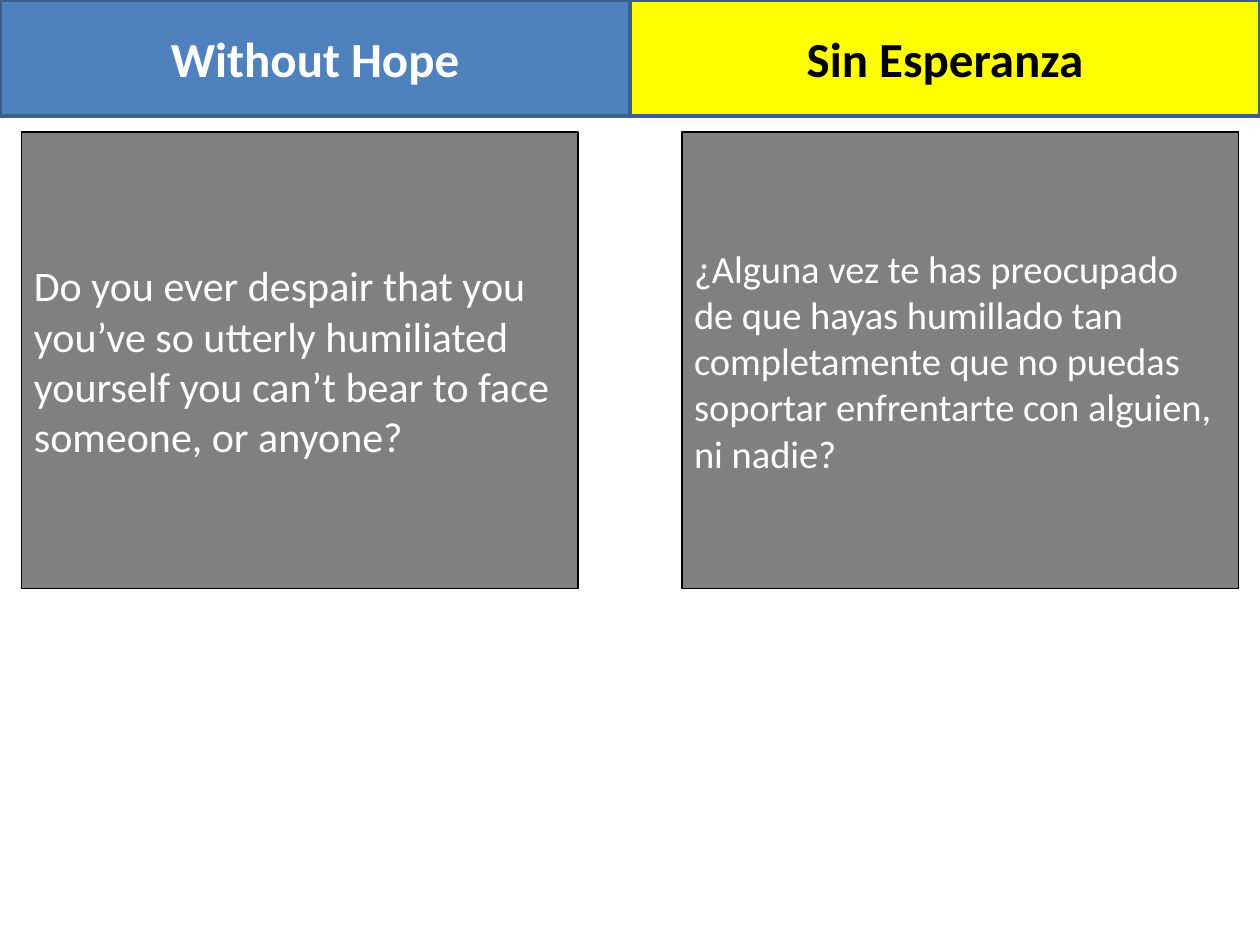
"""Build a bilingual slide with two headings above two text panels."""
from pptx import Presentation
from pptx.dml.color import RGBColor as RGB
from pptx.enum.shapes import MSO_SHAPE as Shape
from pptx.enum.text import MSO_ANCHOR as Anchor, MSO_AUTO_SIZE as Fit, PP_ALIGN as Align
from pptx.util import Inches, Pt

COLORS = {
    "blue": "4F81BD", "yellow": "FFFF00", "gray": "808080",
    "edge": "3A5F8C", "black": "000000", "white": "FFFFFF",
}


def color(name):
    return RGB.from_string(COLORS[name])


def style(box, place, fill, line, text, align, font):
    box.left, box.top, box.width, box.height = map(Inches, place)
    box.fill.solid()
    box.fill.fore_color.rgb = color(fill)
    box.line.color.rgb = color(line[0])
    box.line.width = Pt(line[1])
    frame = box.text_frame
    frame.text = text
    frame.word_wrap = True
    frame.auto_size = Fit.NONE
    frame.vertical_anchor = Anchor.MIDDLE
    par = frame.paragraphs[0]
    par.alignment = align
    run = par.runs[0]
    run.font.color.rgb = color(font["color"])
    for key in ("name", "size", "bold"):
        setattr(run.font, key, font[key])


deck = Presentation()
deck.slide_width, deck.slide_height = Inches(10), Inches(7.5)
slide = deck.slides.add_slide(deck.slide_layouts[5])

half, margin = 5, 0.17
wide = 4.42
panels = [
    (margin, 24, "Do you ever despair that you you’ve so utterly humiliated "
     "yourself you can’t bear to face someone, or anyone?"),
    (2 * half - margin - wide, 22, "¿Alguna vez te has preocupado de que hayas "
     "humillado tan completamente que no puedas soportar enfrentarte con alguien, "
     "ni nadie?"),
]
for left, size, text in panels:
    panel = slide.shapes.add_shape(Shape.RECTANGLE, 0, 0, 0, 0)
    panel.shadow.inherit = False
    font = {"name": "Calibri", "size": Pt(size), "bold": False, "color": "white"}
    style(panel, (left, 1.05, wide, 3.62), "gray", ("black", 1), text, Align.LEFT, font)

second = slide.shapes.add_shape(Shape.RECTANGLE, 0, 0, 0, 0)
second.shadow.inherit = False
heads = [
    (slide.shapes.title, "blue", "white", "Without Hope"),
    (second, "yellow", "black", "Sin Esperanza"),
]
for col, (head, fill, ink, text) in enumerate(heads):
    font = {"name": "Calibri", "size": Pt(28), "bold": True, "color": ink}
    style(head, (col * half, 0, half, 0.92), fill, ("edge", 2), text, Align.CENTER, font)

deck.save("out.pptx")
